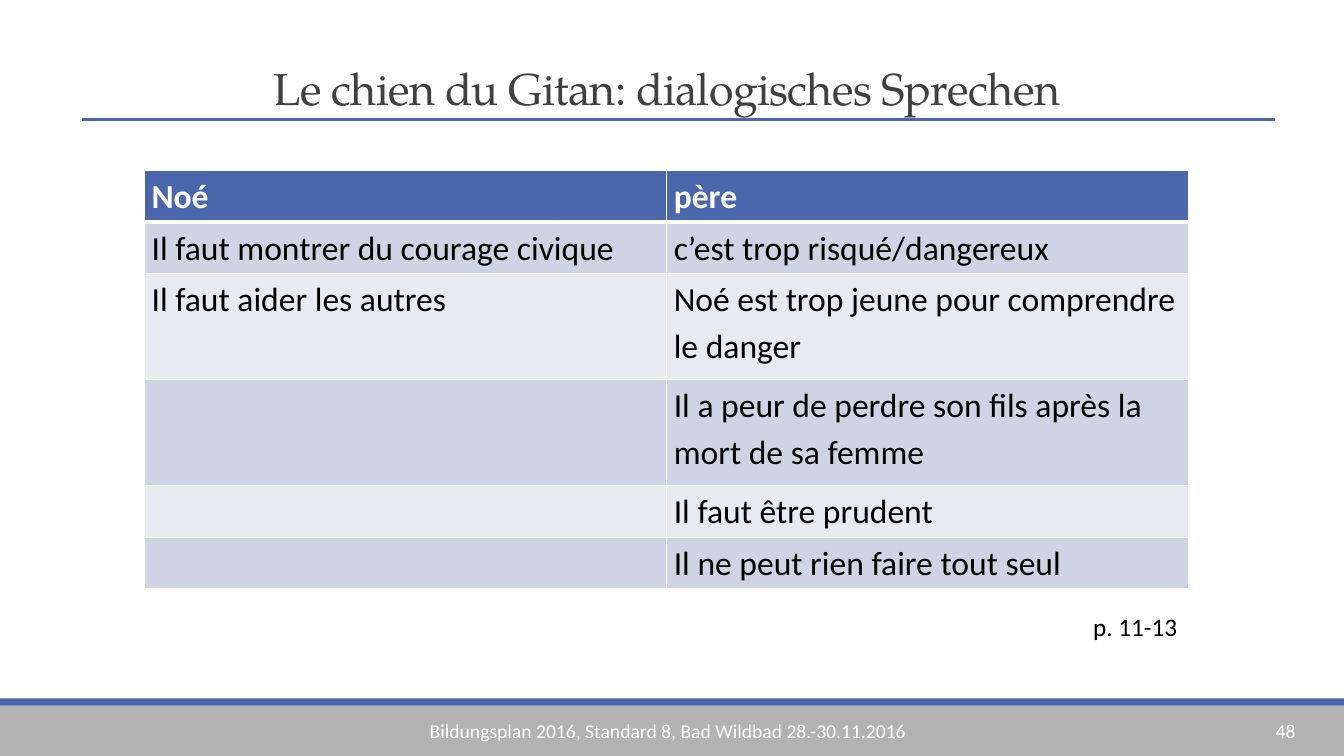
from lxml.etree import SubElement
from pptx import Presentation
from pptx.dml.color import RGBColor
from pptx.enum.shapes import MSO_CONNECTOR, MSO_SHAPE
from pptx.enum.text import MSO_ANCHOR
from pptx.oxml.ns import qn
from pptx.util import Cm, Pt

BLUE = RGBColor(0x4A, 0x66, 0xAC)
GREY = RGBColor(0xB2, 0xB2, 0xB2)
DARK = RGBColor(0x40, 0x40, 0x40)
BLACK = RGBColor(0, 0, 0)
WHITE = RGBColor(0xFF, 0xFF, 0xFF)
BANDS = [RGBColor(0xE9, 0xEA, 0xF1), RGBColor(0xD0, 0xD3, 0xE3)]

ARGUMENTS = [
    ("Noé", "père"),
    ("Il faut montrer du courage civique", "c’est trop risqué/dangereux"),
    ("Il faut aider les autres", "Noé est trop jeune pour comprendre le danger"),
    ("", "Il a peur de perdre son fils après la mort de sa femme"),
    ("", "Il faut être prudent"),
    ("", "Il ne peut rien faire tout seul"),
]
ROW_HEIGHTS = [1.3, 1.3, 2.67, 2.67, 1.3, 1.3]


def write(tf, text, size=14, color=BLACK, font="Calibri", bold=False,
          line_spacing=None, tracking=None):
    p = tf.paragraphs[0]
    p.line_spacing = line_spacing
    r = p.add_run()
    r.text = text
    r.font.name, r.font.size, r.font.bold = font, Pt(size), bold
    r.font.color.rgb = color
    if tracking is not None:
        r.font._element.set("spc", str(int(tracking * 100)))


class SlideBuilder:
    def __init__(self, slide, accent=BLUE):
        self.shapes = slide.shapes
        self.accent = accent

    def bar(self, x, y, w, h, color):
        s = self.shapes.add_shape(MSO_SHAPE.RECTANGLE, Cm(x), Cm(y), Cm(w), Cm(h))
        s.shadow.inherit = False
        s.fill.solid()
        s.fill.fore_color.rgb = color
        s.line.fill.background()

    def text(self, x, y, w, h, text, wrap=True, anchor=MSO_ANCHOR.TOP, **style):
        tf = self.shapes.add_textbox(Cm(x), Cm(y), Cm(w), Cm(h)).text_frame
        tf.word_wrap = wrap
        tf.vertical_anchor = anchor
        write(tf, text, **style)

    def rule(self, x1, x2, y, width):
        s = self.shapes.add_connector(MSO_CONNECTOR.STRAIGHT,
                                      Cm(x1), Cm(y), Cm(x2), Cm(y))
        s.line.color.rgb = self.accent
        s.line.width = Pt(width)
        SubElement(s._element.spPr, qn("a:effectLst"))

    def border(self, cell, side, width):
        ln = SubElement(cell._tc.get_or_add_tcPr(), qn(f"a:ln{side}"), w=str(Pt(width)))
        fill = SubElement(ln, qn("a:solidFill"))
        SubElement(fill, qn("a:srgbClr"), val=str(WHITE))

    def table(self, x, y, col_width, heights, rows):
        cols = len(rows[0])
        table = self.shapes.add_table(len(rows), cols, Cm(x), Cm(y),
                                      Cm(col_width * cols), Cm(sum(heights))).table
        for column in table.columns:
            column.width = Cm(col_width)
        for i, (height, row) in enumerate(zip(heights, rows)):
            table.rows[i].height = Cm(height)
            for j, text in enumerate(row):
                self.cell(table.cell(i, j), i, text)

    def cell(self, cell, row, text):
        header = row == 0
        cell.margin_left = cell.margin_right = Cm(0.18)
        cell.margin_top = cell.margin_bottom = 0
        # Thick white line between the header and the first row
        for side in "LRTB":
            thick = (header and side == "B") or (row == 1 and side == "T")
            self.border(cell, side, 3 if thick else 1)
        cell.fill.solid()
        cell.fill.fore_color.rgb = self.accent if header else BANDS[row % 2]
        if text:
            write(cell.text_frame, text, size=24, bold=header, line_spacing=1.15,
                  color=WHITE if header else BLACK)


def main():
    prs = Presentation()
    prs.slide_width, prs.slide_height = Cm(33.87), Cm(19.05)
    page = SlideBuilder(prs.slides.add_slide(prs.slide_layouts[6]))

    # Footer
    page.bar(0, 17.78, 33.87, 1.27, GREY)
    page.bar(0, 17.6, 33.87, 0.18, BLUE)
    page.text(10.58, 17.98, 12.67, 0.86, color=WHITE,
              text="Bildungsplan 2016, Standard 8, Bad Wildbad 28.-30.11.2016")
    page.text(31.9, 17.98, 1.9, 0.86, "48", color=WHITE)

    # Title
    page.text(6.65, 0.89, 20.88, 2.13, "Le chien du Gitan: dialogisches Sprechen",
              anchor=MSO_ANCHOR.BOTTOM, size=32, color=DARK,
              font="TeX Gyre Pagella", line_spacing=0.85, tracking=-0.5)
    page.rule(2.06, 32.13, 3.02, 2.25)

    # Arguments and page reference
    page.text(27.3, 15.29, 2.67, 1.02, "p. 11-13", wrap=False, size=18)
    page.table(3.64, 4.3, 13.16, ROW_HEIGHTS, ARGUMENTS)

    prs.save("out.pptx")


if __name__ == "__main__":
    main()
